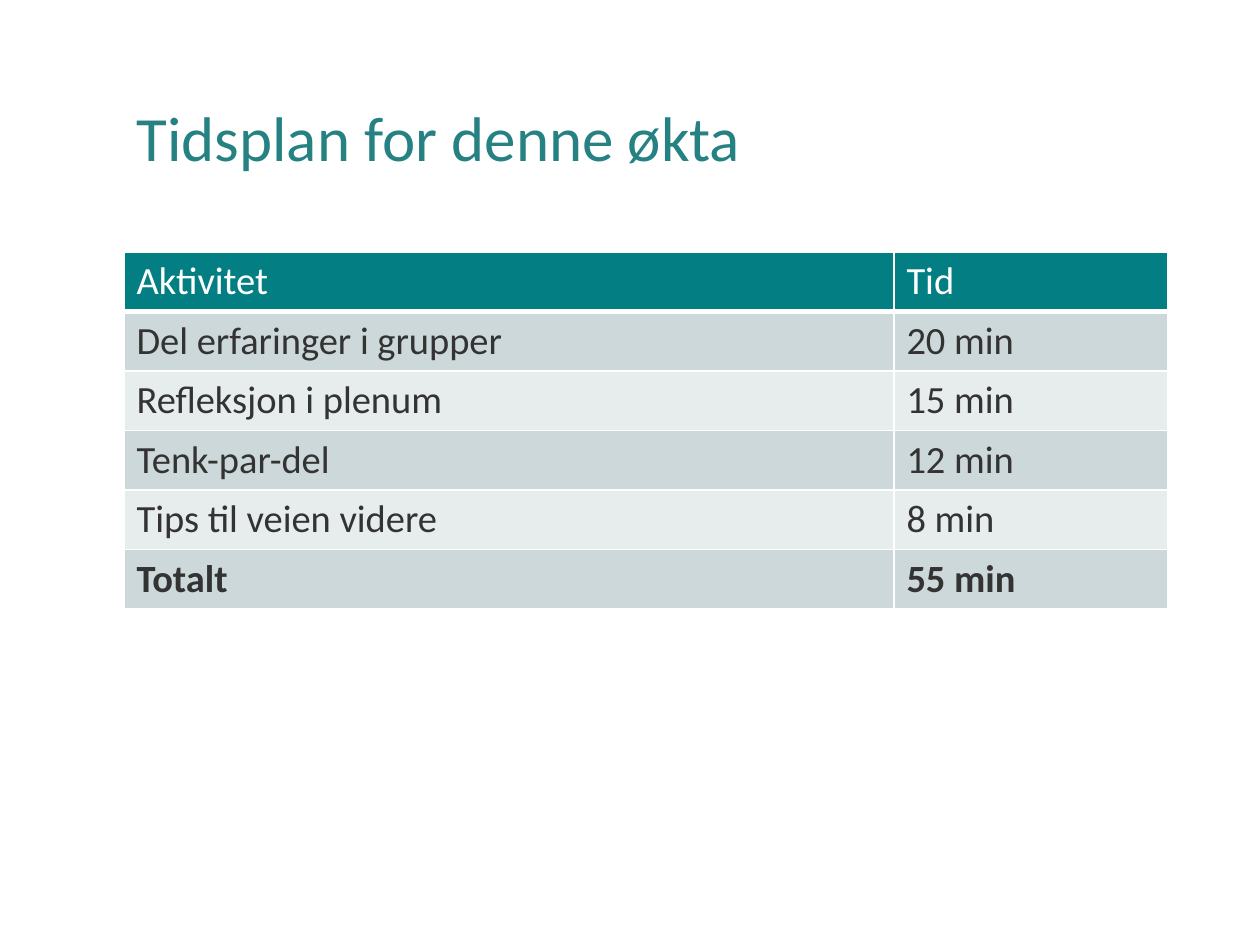
from lxml import etree
from pptx import Presentation
from pptx import util as u
from pptx.dml.color import RGBColor
from pptx.enum import text
from pptx.oxml.ns import qn

TITLE = RGBColor(0x26, 0x81, 0x83)
HEAD = RGBColor(0x03, 0x7F, 0x83)
BANDS = [RGBColor(0xE7, 0xEC, 0xED), RGBColor(0xCC, 0xD8, 0xD9)]
INK = RGBColor(0x33, 0x33, 0x33)
WHITE = RGBColor(0xFF, 0xFF, 0xFF)

ROWS = [
    ("Aktivitet", "Tid"),
    ("Del erfaringer i grupper", "20 min"),
    ("Refleksjon i plenum", "15 min"),
    ("Tenk-par-del", "12 min"),
    ("Tips til veien videre", "8 min"),
    ("Totalt", "55 min"),
]
LEFT, WIDTH, HIGH = u.Cm(2.5), u.Cm(21.05), u.Cm(1.2)


def style(para, size, color, bold=False):
    font = para.font
    font.name, font.size, font.bold = "Calibri", u.Pt(size), bold
    font.color.rgb = color


def edge(cell, side, width):
    line = etree.SubElement(cell._tc.get_or_add_tcPr(), qn("a:" + side), w=str(u.Pt(width)))
    fill = etree.SubElement(line, qn("a:solidFill"))
    etree.SubElement(fill, qn("a:srgbClr"), val=str(WHITE))


prs = Presentation()
prs.slide_width, prs.slide_height = u.Cm(25.4), u.Cm(19.05)
slide = prs.slides.add_slide(prs.slide_layouts[5])

# Title
title = slide.shapes.title
title.left, title.top, title.width, title.height = LEFT, u.Cm(1.01), WIDTH, u.Cm(3.68)
title.text_frame.text = "Tidsplan for denne økta"
title.text_frame.vertical_anchor = text.MSO_ANCHOR.MIDDLE
para = title.text_frame.paragraphs[0]
para.alignment = text.PP_ALIGN.LEFT
para.line_spacing = 0.9
style(para, 36, TITLE)

# Timetable
table = slide.shapes.add_table(len(ROWS), 2, LEFT, u.Cm(5.08), WIDTH, HIGH * len(ROWS)).table
table.columns[0].width = u.Cm(15.52)
table.columns[1].width = u.Cm(5.53)
for r, row in enumerate(ROWS):
    table.rows[r].height = HIGH
    for c, words in enumerate(row):
        cell = table.cell(r, c)
        cell.text = words
        style(cell.text_frame.paragraphs[0], 22, INK if r else WHITE, r == len(ROWS) - 1)
        # Borders, heavier under the header
        edge(cell, "lnL", 1)
        edge(cell, "lnR", 1)
        edge(cell, "lnT", 3 if r == 1 else 1)
        edge(cell, "lnB", 1 if r else 3)
        cell.fill.solid()
        cell.fill.fore_color.rgb = BANDS[r % 2] if r else HEAD

prs.save("out.pptx")
